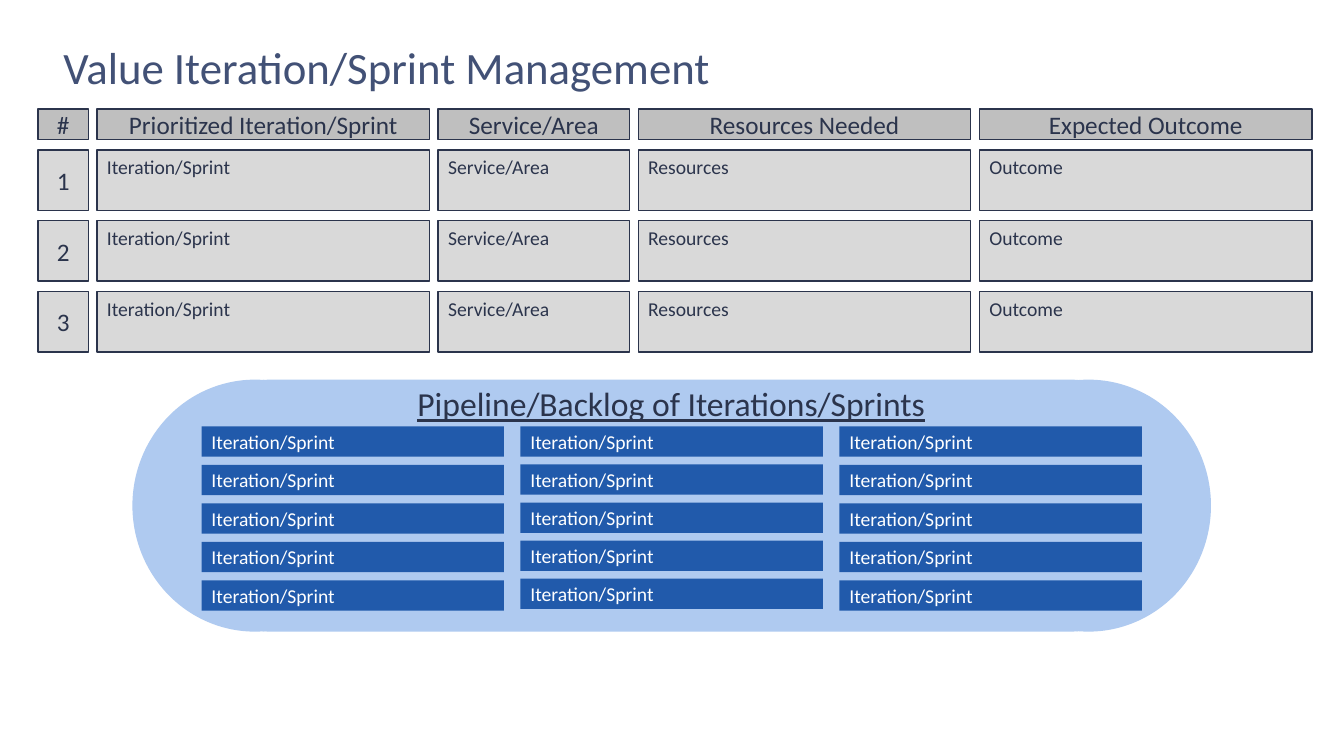
from pptx import Presentation
from pptx.dml.color import RGBColor
from pptx.enum.shapes import MSO_SHAPE
from pptx.enum.text import MSO_ANCHOR, PP_ALIGN
from pptx.util import Pt

RECTANGLE, ROUNDED, OVAL = MSO_SHAPE.RECTANGLE, MSO_SHAPE.ROUNDED_RECTANGLE, MSO_SHAPE.OVAL
TOP, MIDDLE, BOTTOM = MSO_ANCHOR.TOP, MSO_ANCHOR.MIDDLE, MSO_ANCHOR.BOTTOM
LEFT, CENTER = PP_ALIGN.LEFT, PP_ALIGN.CENTER

TITLE_BLUE = RGBColor(0x42, 0x51, 0x76)
NAVY = RGBColor(0x2B, 0x34, 0x4C)
HEADER_GREY = RGBColor(0xBF, 0xBF, 0xBF)
CELL_GREY = RGBColor(0xD9, 0xD9, 0xD9)
PALE_BLUE = RGBColor(0xAF, 0xCA, 0xF0)
BAR_BLUE = RGBColor(0x21, 0x5A, 0xAB)
WHITE = RGBColor(0xFF, 0xFF, 0xFF)


def add_box(kind, area, fill, outline=None):
    box = page.shapes.add_shape(kind, *map(Pt, area))
    box.shadow.inherit = False
    box.fill.solid()
    box.fill.fore_color.rgb = fill
    if outline is None:
        box.line.fill.background()
    else:
        box.line.color.rgb = outline
        box.line.width = Pt(1)
    return box


def write(box, text, size, color, align=LEFT, anchor=MIDDLE, underline=None):
    frame = box.text_frame
    frame.word_wrap = True
    frame.vertical_anchor = anchor
    para = frame.paragraphs[0]
    para.alignment = align
    span = para.add_run()
    span.text = text
    span.font.color.rgb = color
    font_values = {"name": "Calibri", "size": Pt(size), "underline": underline}
    for name, value in font_values.items():
        setattr(span.font, name, value)


deck = Presentation()
deck.slide_width, deck.slide_height = Pt(960), Pt(540)
page = deck.slides.add_slide(deck.slide_layouts[6])

# Title
title = page.shapes.add_textbox(Pt(38.2), Pt(23), Pt(882.7), Pt(47.5))
write(title, "Value Iteration/Sprint Management", 32, TITLE_BLUE, anchor=BOTTOM)

# Grid of prioritized iterations: header, cell text (None = row number), width
columns = [
    ("#", None, 36),
    ("Prioritized Iteration/Sprint", "Iteration/Sprint", 237.6),
    ("Service/Area", "Service/Area", 136.8),
    ("Resources Needed", "Resources", 237.6),
    ("Expected Outcome", "Outcome", 237.6),
]
COLUMN_GAP, ROW_PITCH = 6.1, 50.6
left = 27.2
for header, cell_text, width in columns:
    box = add_box(RECTANGLE, (left, 78, width, 21.6), HEADER_GREY, NAVY)
    write(box, header, 18, NAVY, CENTER)
    for row in range(3):
        area = (left, 107.1 + row * ROW_PITCH, width, 43.2)
        box = add_box(RECTANGLE, area, CELL_GREY, NAVY)
        if cell_text is None:
            write(box, str(row + 1), 18, NAVY, CENTER)
        else:
            write(box, cell_text, 14, NAVY, anchor=TOP)
    left += width + COLUMN_GAP

# Backlog pill: rounded body with an oval at each end
PILL_TOP, PILL_HEIGHT = 271.2, 180
for kind, left, width in [(ROUNDED, 162, 634.3), (OVAL, 94.6, 175), (OVAL, 690, 175)]:
    add_box(kind, (left, PILL_TOP, width, PILL_HEIGHT), PALE_BLUE)

heading = page.shapes.add_textbox(Pt(281.5), Pt(273.8), Pt(396), Pt(28.8))
write(heading, "Pipeline/Backlog of Iterations/Sprints", 24, NAVY, CENTER, underline=True)

# Backlog bars; the middle column is spaced slightly tighter
for column, pitch in enumerate([27.5, 27.2, 27.5]):
    for row in range(5):
        area = (144 + column * 227.8, 304.6 + row * pitch, 216, 21.6)
        write(add_box(RECTANGLE, area, BAR_BLUE), "Iteration/Sprint", 14, WHITE)

deck.save("out.pptx")
